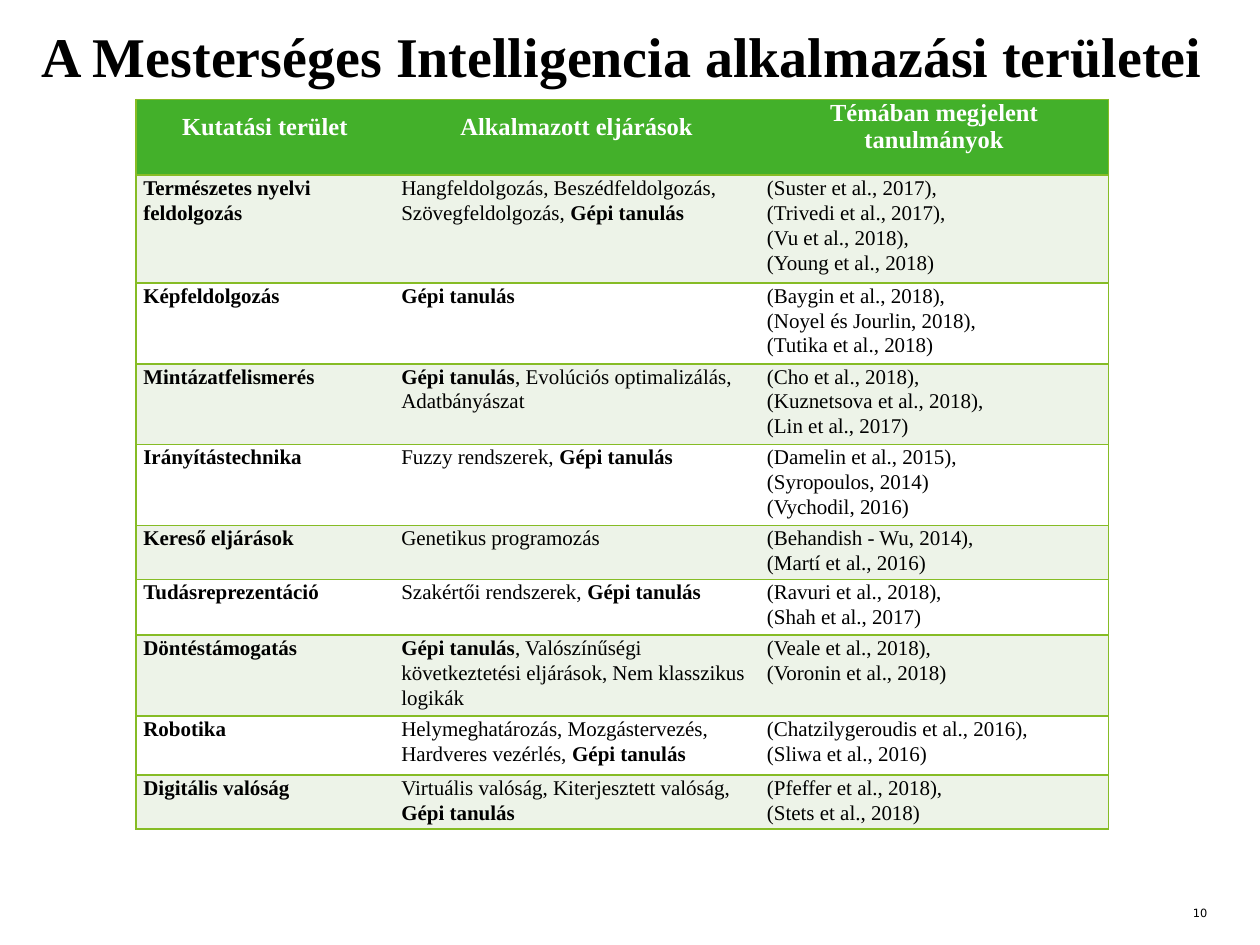
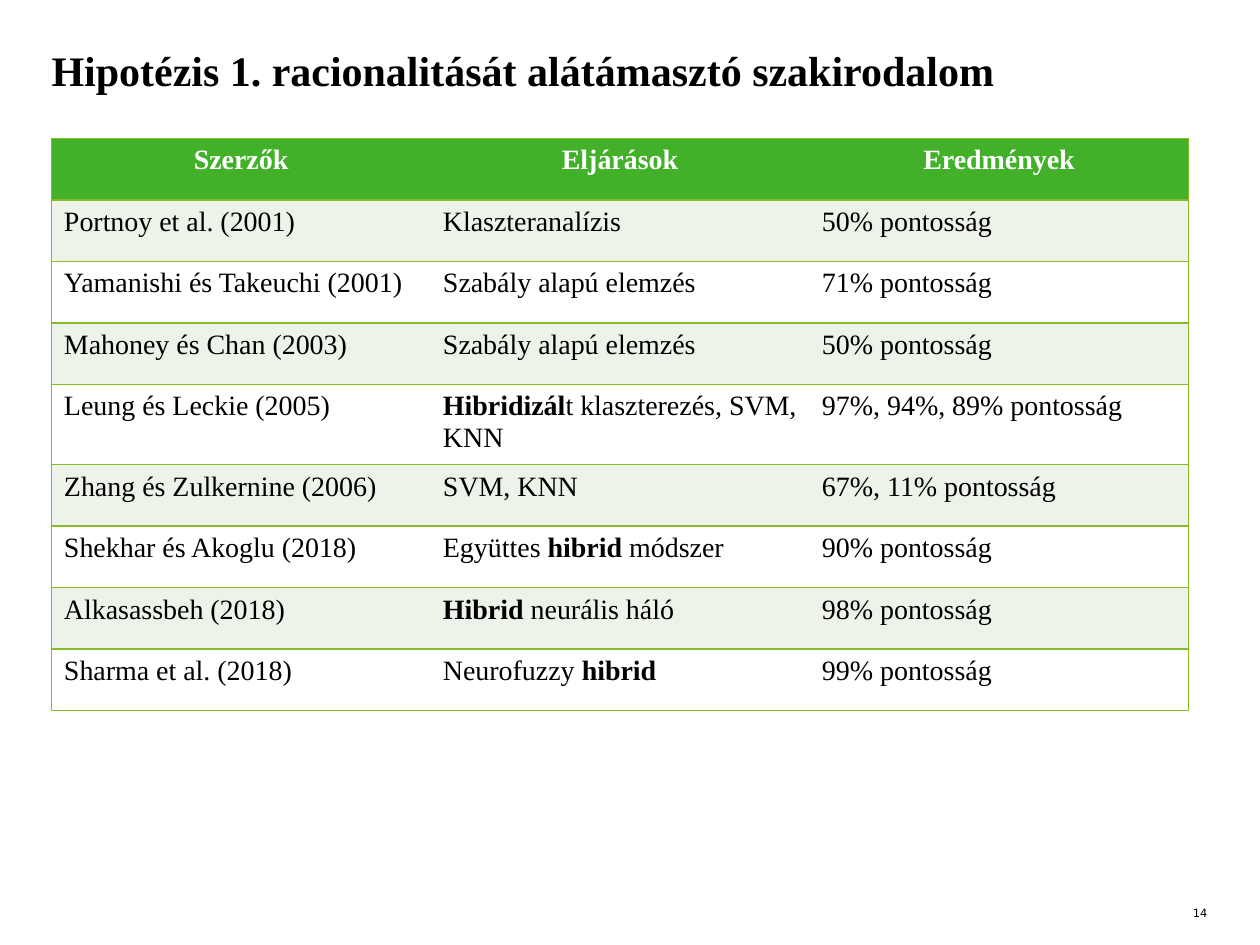
from lxml import etree
from pptx import Presentation
from pptx.dml.color import RGBColor
from pptx.enum.text import PP_ALIGN as Align
from pptx.oxml.ns import qn
from pptx.util import Cm, Pt

BLACK = RGBColor(0x00, 0x00, 0x00)
WHITE = RGBColor(0xFF, 0xFF, 0xFF)
GREEN = RGBColor(0x43, 0xB0, 0x2A)
PALE = RGBColor(0xED, 0xF3, 0xE8)
LIME = RGBColor(0x86, 0xBC, 0x25)
SERIF, SANS = "Times New Roman", "DejaVu Sans"

# Text between asterisks is bold; a line break starts a new paragraph.
FIELDS = [
    ("*Kutatási terület*", "*Alkalmazott eljárások*", "*Témában megjelent tanulmányok*"),
    ("*Természetes nyelvi feldolgozás*",
     "Hangfeldolgozás, Beszédfeldolgozás, Szövegfeldolgozás, *Gépi tanulás*",
     "(Suster et al., 2017),\n(Trivedi et al., 2017),\n(Vu et al., 2018),\n(Young et al., 2018)"),
    ("*Képfeldolgozás*", "*Gépi tanulás*",
     "(Baygin et al., 2018),\n(Noyel és Jourlin, 2018),\n(Tutika et al., 2018)"),
    ("*Mintázatfelismerés*", "*Gépi tanulás*, Evolúciós optimalizálás, Adatbányászat",
     "(Cho et al., 2018),\n(Kuznetsova et al., 2018),\n(Lin et al., 2017)"),
    ("*Irányítástechnika*", "Fuzzy rendszerek, *Gépi tanulás*",
     "(Damelin et al., 2015),\n(Syropoulos, 2014)\n(Vychodil, 2016)"),
    ("*Kereső eljárások*", "Genetikus programozás",
     "(Behandish - Wu, 2014),\n(Martí et al., 2016)"),
    ("*Tudásreprezentáció*", "Szakértői rendszerek, *Gépi tanulás*",
     "(Ravuri et al., 2018),\n(Shah et al., 2017)"),
    ("*Döntéstámogatás*",
     "*Gépi tanulás*, Valószínűségi következtetési eljárások, Nem klasszikus logikák",
     "(Veale et al., 2018),\n(Voronin et al., 2018)"),
    ("*Robotika*", "Helymeghatározás, Mozgástervezés, Hardveres vezérlés, *Gépi tanulás*",
     "(Chatzilygeroudis et al., 2016),\n(Sliwa et al., 2016)"),
    ("*Digitális valóság*", "Virtuális valóság, Kiterjesztett valóság, *Gépi tanulás*",
     "(Pfeffer et al., 2018),\n(Stets et al., 2018)"),
]
STUDIES = [
    ("*Szerzők*", "*Eljárások*", "*Eredmények*"),
    ("Portnoy et al. (2001)", "Klaszteranalízis", "50% pontosság"),
    ("Yamanishi és Takeuchi (2001)", "Szabály alapú elemzés", "71% pontosság"),
    ("Mahoney és Chan (2003)", "Szabály alapú elemzés", "50% pontosság"),
    ("Leung és Leckie (2005)", "*Hibridizál*t klaszterezés, SVM, KNN",
     "97%, 94%, 89% pontosság"),
    ("Zhang és Zulkernine (2006)", "SVM, KNN", "67%, 11% pontosság"),
    ("Shekhar és Akoglu (2018)", "Együttes *hibrid* módszer", "90% pontosság"),
    ("Alkasassbeh (2018)", "*Hibrid* neurális háló", "98% pontosság"),
    ("Sharma et al. (2018)", "Neurofuzzy *hibrid*", "99% pontosság"),
]

# Boxes are left, top, width, height in cm; pad is the side and top cell margin.
SLIDES = [
    dict(title="A Mesterséges Intelligencia alkalmazási területei", size=32,
         box=(0.84, 0.43, 23.5, 3.18), page="10", rows=FIELDS, spot=(2.74, 2.01),
         wide=(5.2, 7.37, 7.04), pad=(0.15, 0), head=14, body=12,
         lead=(1.5, 1.5, 1), gap=1.07,
         high=(1.52, 2.16, 1.63, 1.63, 1.63, 1.09, 1.12, 1.63, 1.19, 1.09)),
    dict(title="Hipotézis 1. racionalitását alátámasztó szakirodalom", size=24,
         box=(1.04, 0.89, 23.32, 1.93), page="14", rows=STUDIES, spot=(1.04, 2.79),
         wide=(7.64,) * 3, pad=(0.25, 0.13), head=16, body=16,
         lead=(1, 1, 1), gap=1, high=(1.24,) * 9),
]


def label(slide, box, text, font, size, bold=False, align=Align.LEFT):
    """Add a text box without margins, holding one black line."""
    frame = slide.shapes.add_textbox(*map(Cm, box)).text_frame
    frame.word_wrap = True
    frame.margin_left = frame.margin_right = frame.margin_top = frame.margin_bottom = 0
    frame.text = text
    par = frame.paragraphs[0]
    par.alignment = align
    face = par.runs[0].font
    face.name, face.size, face.bold = font, Pt(size), bold
    face.color.rgb = BLACK


def edge(cell, side, shown):
    """Draw one cell border, or clear it."""
    line = etree.SubElement(cell._tc.get_or_add_tcPr(), qn("a:ln" + side), w=str(Pt(1)))
    if shown:
        fill = etree.SubElement(line, qn("a:solidFill"))
        etree.SubElement(fill, qn("a:srgbClr"), val=str(LIME))
    else:
        etree.SubElement(line, qn("a:noFill"))


deck = Presentation()
deck.slide_width, deck.slide_height = Cm(25.4), Cm(19.05)

for plan in SLIDES:
    slide = deck.slides.add_slide(deck.slide_layouts[6])
    label(slide, (22.66, 18.26, 1.68, 0.28), plan["page"], SANS, 6.5, align=Align.RIGHT)
    label(slide, plan["box"], plan["title"], SERIF, plan["size"], bold=True)

    rows, wide, high = plan["rows"], plan["wide"], plan["high"]
    place = (*plan["spot"], sum(wide), sum(high))
    table = slide.shapes.add_table(len(rows), len(wide), *map(Cm, place)).table
    for col, width in zip(table.columns, wide):
        col.width = Cm(width)
    for row, height in zip(table.rows, high):
        row.height = Cm(height)

    for r, texts in enumerate(rows):
        for c, text in enumerate(texts):
            cell = table.cell(r, c)
            shown = {"L": c == 0, "R": c == len(wide) - 1, "T": True, "B": True}
            for side in shown:
                edge(cell, side, shown[side])
            cell.fill.solid()
            cell.fill.fore_color.rgb = GREEN if r == 0 else PALE if r % 2 else WHITE
            cell.margin_left = cell.margin_right = Cm(plan["pad"][0])
            cell.margin_top = cell.margin_bottom = Cm(plan["pad"][1])

            frame = cell.text_frame
            for n, line in enumerate(text.split("\n")):
                par = frame.add_paragraph() if n else frame.paragraphs[0]
                par.alignment = Align.LEFT if r else Align.CENTER
                par.line_spacing = float(plan["gap"] if r else plan["lead"][c])
                for k, part in enumerate(line.split("*")):
                    if part:
                        run = par.add_run()
                        run.text = part
                        face = run.font
                        face.name, face.bold = SERIF, k % 2 == 1
                        face.size = Pt(plan["body"] if r else plan["head"])
                        face.color.rgb = BLACK if r else WHITE

deck.save("out.pptx")
